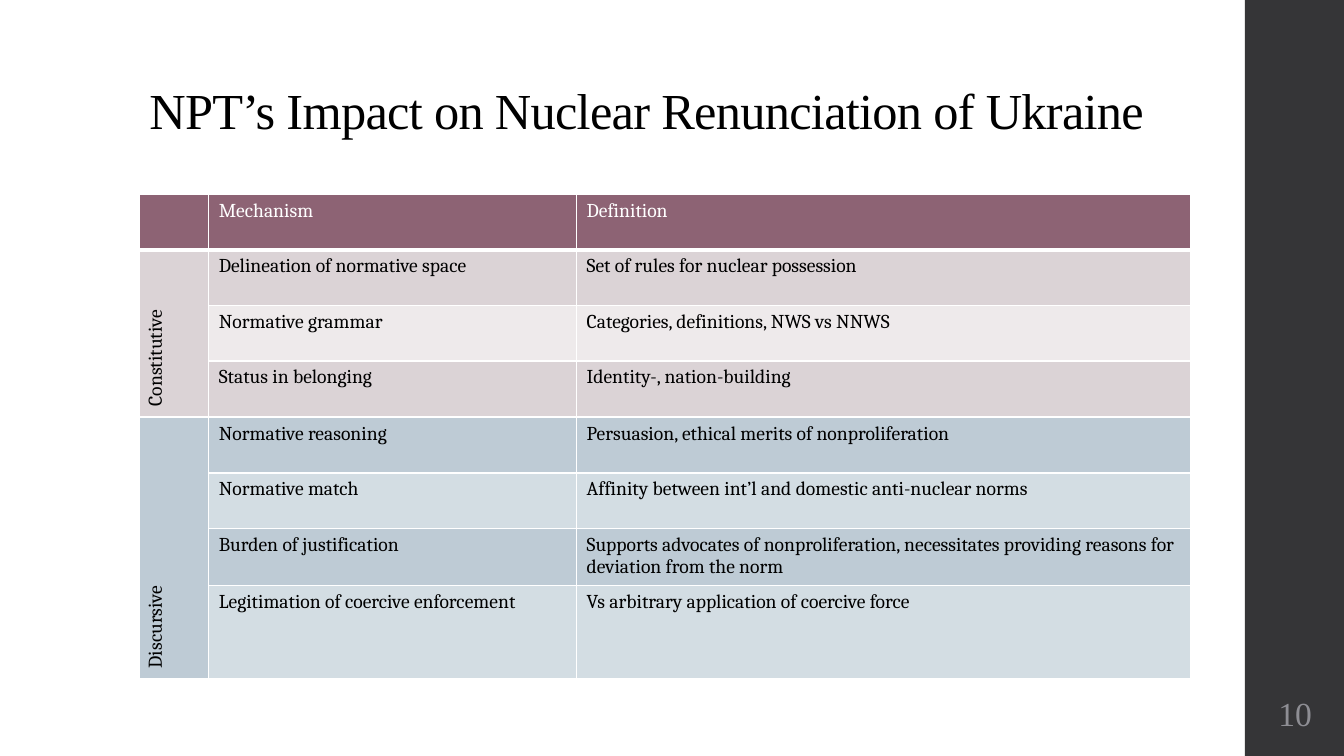
"""Build a slide with a title, two stacked tables of norm types, and a numbered side bar."""
from dataclasses import dataclass

from lxml.etree import SubElement
from pptx import Presentation
from pptx.dml.color import RGBColor as Rgb
from pptx.enum.shapes import MSO_SHAPE as Shape
from pptx.enum.text import MSO_ANCHOR as Anchor, MSO_AUTO_SIZE as Fit, PP_ALIGN as Align
from pptx.oxml.ns import qn
from pptx.slide import Slide
from pptx.table import _Cell as Cell
from pptx.text.text import _Paragraph as Para
from pptx.util import Cm, Pt


@dataclass(frozen=True)
class Theme:
    ink: str = "000000"
    white: str = "FFFFFF"
    bar: str = "353537"
    number: str = "8E8E94"
    head: str = "8D6374"
    rose: tuple[str, str] = ("DBD3D6", "EEEAEB")
    blue: tuple[str, str] = ("BECBD5", "D3DDE3")
    serif: str = "Times New Roman"
    body: str = "Cambria"
    title_size: int = 36
    page_size: int = 24
    cell_size: int = 14
    line: int = 1
    rule: int = 3


@dataclass(frozen=True)
class Block:
    label: str
    top: float
    bands: tuple[str, str]
    rows: list[tuple[str, str]]
    heights: list[float]
    head: tuple[str, str] | None = None


THEME = Theme()
LEFT = 3.51
COLS = (1.75, 9.27, 15.47)
ROW = 1.4
BAR_LEFT, BAR_WIDTH = 31.37, 2.54
WIDE, HIGH = 33.87, 19.05

BLOCKS = [
    Block("Constitutive", 4.9, THEME.rose, [
        ("Delineation of normative space", "Set of rules for nuclear possession"),
        ("Normative grammar", "Categories, definitions, NWS vs NNWS"),
        ("Status in belonging", "Identity-, nation-building"),
    ], [ROW] * 4, ("Mechanism", "Definition")),
    Block("Discursive", 10.52, THEME.blue, [
        ("Normative reasoning", "Persuasion, ethical merits of nonproliferation"),
        ("Normative match", "Affinity between int’l and domestic anti-nuclear norms"),
        ("Burden of justification",
         "Supports advocates of nonproliferation, necessitates providing reasons for "
         "deviation from the norm"),
        ("Legitimation of coercive enforcement", "Vs arbitrary application of coercive force"),
    ], [ROW] * 3 + [2.31]),
]


def style(para: Para, font: str, size: int, color: str) -> None:
    for run in para.runs:
        run.font.name = font
        run.font.size = Pt(size)
        run.font.bold = False
        run.font.color.rgb = Rgb.from_string(color)


def edge(cell: Cell, base: int) -> None:
    props = cell._tc.get_or_add_tcPr()
    for side in "LRTB":
        width = base if side == "B" else THEME.line
        line = SubElement(props, qn(f"a:ln{side}"), w=str(Pt(width)))
        fill = SubElement(line, qn("a:solidFill"))
        SubElement(fill, qn("a:srgbClr"), val=THEME.white)


def paint(cell: Cell, text: str, fill: str, color: str, base: int) -> None:
    edge(cell, base)
    cell.fill.solid()
    cell.fill.fore_color.rgb = Rgb.from_string(fill)
    if text:
        cell.text_frame.text = text
        style(cell.text_frame.paragraphs[0], THEME.body, THEME.cell_size, color)


def add_block(slide: Slide, block: Block) -> None:
    frame = slide.shapes.add_table(
        len(block.heights), len(COLS), Cm(LEFT), Cm(block.top),
        Cm(sum(COLS)), Cm(sum(block.heights)))
    table = frame.table
    table.first_row = block.head is not None
    for col, width in zip(table.columns, COLS):
        col.width = Cm(width)
    for row, height in zip(table.rows, block.heights):
        row.height = Cm(height)
    first = 0
    if block.head:
        first = 1
        for col, text in enumerate(("", *block.head)):
            paint(table.cell(0, col), text, THEME.head, THEME.white, THEME.rule)
    for index, pair in enumerate(block.rows):
        label = "" if index else block.label
        for col, text in enumerate((label, *pair)):
            fill = block.bands[index % 2 if col else 0]
            paint(table.cell(first + index, col), text, fill, THEME.ink, THEME.line)
    side = table.cell(first, 0)
    side.merge(table.cell(len(block.heights) - 1, 0))
    side.vertical_anchor = Anchor.MIDDLE
    side._tc.get_or_add_tcPr().set("vert", "vert270")


def add_title(slide: Slide, text: str) -> None:
    title = slide.shapes.title
    title.left, title.top, title.width, title.height = Cm(LEFT), Cm(1.02), Cm(26.92), Cm(3.68)
    frame = title.text_frame
    frame.text = text
    frame.auto_size = Fit.NONE
    frame.vertical_anchor = Anchor.MIDDLE
    para = frame.paragraphs[0]
    para.alignment = Align.LEFT
    para.line_spacing = 0.9
    style(para, THEME.serif, THEME.title_size, THEME.ink)
    para.runs[0].font._element.set("spc", "-50")


def add_bar(slide: Slide) -> None:
    bar = slide.shapes.add_shape(Shape.RECTANGLE, Cm(BAR_LEFT), 0, Cm(BAR_WIDTH), Cm(HIGH))
    bar.shadow.inherit = False
    bar.fill.solid()
    bar.fill.fore_color.rgb = Rgb.from_string(THEME.bar)
    bar.line.fill.background()


def add_page(slide: Slide, text: str) -> None:
    box = slide.shapes.add_textbox(Cm(BAR_LEFT), Cm(17.15), Cm(BAR_WIDTH), Cm(1.65))
    frame = box.text_frame
    frame.text = text
    frame.word_wrap = True
    frame.vertical_anchor = Anchor.MIDDLE
    frame.margin_left = frame.margin_right = Cm(0.13)
    frame.margin_top = frame.margin_bottom = Cm(0.13)
    para = frame.paragraphs[0]
    para.alignment = Align.CENTER
    style(para, THEME.serif, THEME.page_size, THEME.number)


def main() -> None:
    deck = Presentation()
    deck.slide_width, deck.slide_height = Cm(WIDE), Cm(HIGH)
    slide = deck.slides.add_slide(deck.slide_layouts.get_by_name("Title Only"))
    add_bar(slide)
    add_title(slide, "NPT’s Impact on Nuclear Renunciation of Ukraine")
    add_page(slide, "10")
    for block in BLOCKS:
        add_block(slide, block)
    deck.save("out.pptx")


if __name__ == "__main__":
    main()
